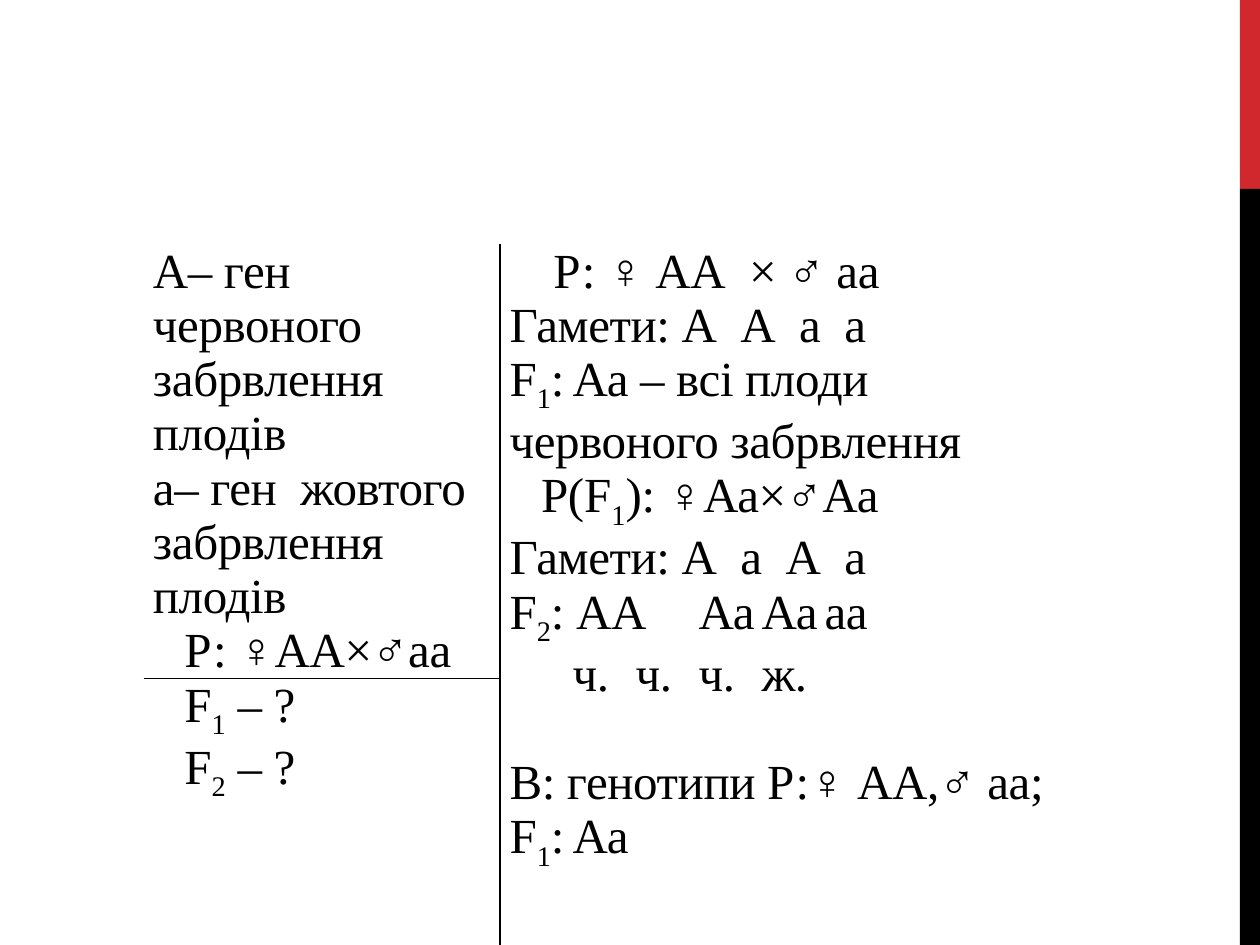
from lxml import etree
from pptx import Presentation
from pptx.dml.color import RGBColor
from pptx.enum import shapes
from pptx.oxml.ns import qn
from pptx.util import Pt

INK = {"red": "D1282E", "black": "000000"}
FONT = "Times New Roman"
PLAIN = "{2D5ABB26-0587-4C30-8999-92F81FD0307C}"

BARS = [("red", 0, 108), ("black", 108, 432)]
WIDTHS = [203.8, 317.5]
HEIGHTS = [248, 153]

# text with "|" between runs, left indent, tab stops, space before
GIVEN = [
    ("А– ген червоного забрвлення плодів", 0, [], 0),
    ("а– ген  жовтого забрвлення плодів", 0, [], 0),
    ("Р: ♀АА×♂аа", 18, [], 0),
]
ASKED = [
    ("F|1| – ?", 18, [], 0),
    ("F|2| – ?", 18, [], 0),
]
SOLVED = [
    ("Р: ♀ АА  × ♂ аа", 25, [], 0),
    ("Гамети: А  А  а  а", 0, [], 0),
    ("F|1|:\tАа – всі плоди червоного забрвлення", 0, [58.5], 0),
    ("Р(|F|1|): ♀Аа×♂Аа", 18, [], 0),
    ("Гамети: А  а  А  а", 0, [], 0),
    ("F|2|: АА\tАа\tАа\tаа", 0, [92, 151, 217], 0),
    ("\tч.\tч.\tч.\tж.", 0, [54, 102.5, 157, 225], 0),
    ("В: генотипи Р:♀ АА,♂ аа; |F|1|:\tАа", 0, [58.5], 31),
]
CELLS = [
    (0, 0, GIVEN, "RB"),
    (0, 1, SOLVED, "L"),
    (1, 0, ASKED, "RT"),
    (1, 1, [], "L"),
]


def tint(name):
    return RGBColor.from_string(INK[name])


def rule(cell, sides):
    props = cell._tc.get_or_add_tcPr()
    for side in "LRTB":
        if side in sides:
            line = etree.SubElement(props, qn("a:ln" + side), w=str(Pt(1)))
            fill = etree.SubElement(line, qn("a:solidFill"))
            etree.SubElement(fill, qn("a:srgbClr"), val=INK["black"])


def write(para, line, left, tabs, gap):
    para.font.name = FONT
    para.font.size = Pt(28)
    para.font.color.rgb = tint("black")
    para.space_before = Pt(gap)
    props = para._p.get_or_add_pPr()
    props.set("marL", str(Pt(left)))
    props.set("indent", "0")
    if tabs:
        stops = etree.Element(qn("a:tabLst"))
        for pos in tabs:
            etree.SubElement(stops, qn("a:tab"), pos=str(Pt(pos)), algn="l")
        props.find(qn("a:defRPr")).addprevious(stops)
    for part in line.split("|"):
        run = para.add_run()
        run.text = part
        look = run._r.get_or_add_rPr()
        if part.isdigit():
            look.set("baseline", "-25000")
        elif part != "F":
            look.set("spc", "-20")


deck = Presentation()
deck.slide_width, deck.slide_height = Pt(720), Pt(540)
slide = deck.slides.add_slide(deck.slide_layouts[6])

for name, top, tall in BARS:
    bar = slide.shapes.add_shape(
        shapes.MSO_SHAPE.RECTANGLE, Pt(708.5), Pt(top), Pt(11.5), Pt(tall))
    bar.shadow.inherit = False
    bar.fill.solid()
    bar.fill.fore_color.rgb = tint(name)
    bar.line.fill.background()

grid = slide.shapes.add_table(
    2, 2, Pt(82), Pt(139.7), Pt(sum(WIDTHS)), Pt(sum(HEIGHTS))).table
grid.first_row = grid.horz_banding = False
grid._tbl.tblPr.find(qn("a:tableStyleId")).text = PLAIN
for col, wide in zip(grid.columns, WIDTHS):
    col.width = Pt(wide)
for row, tall in zip(grid.rows, HEIGHTS):
    row.height = Pt(tall)
grid.cell(0, 1).merge(grid.cell(1, 1))

for row, col, lines, sides in CELLS:
    cell = grid.cell(row, col)
    cell.margin_left = cell.margin_right = Pt(5.4)
    cell.margin_top = cell.margin_bottom = 0
    rule(cell, sides)
    cell.fill.background()
    frame = cell.text_frame
    for num, item in enumerate(lines):
        write(frame.add_paragraph() if num else frame.paragraphs[0], *item)

deck.save("out.pptx")
